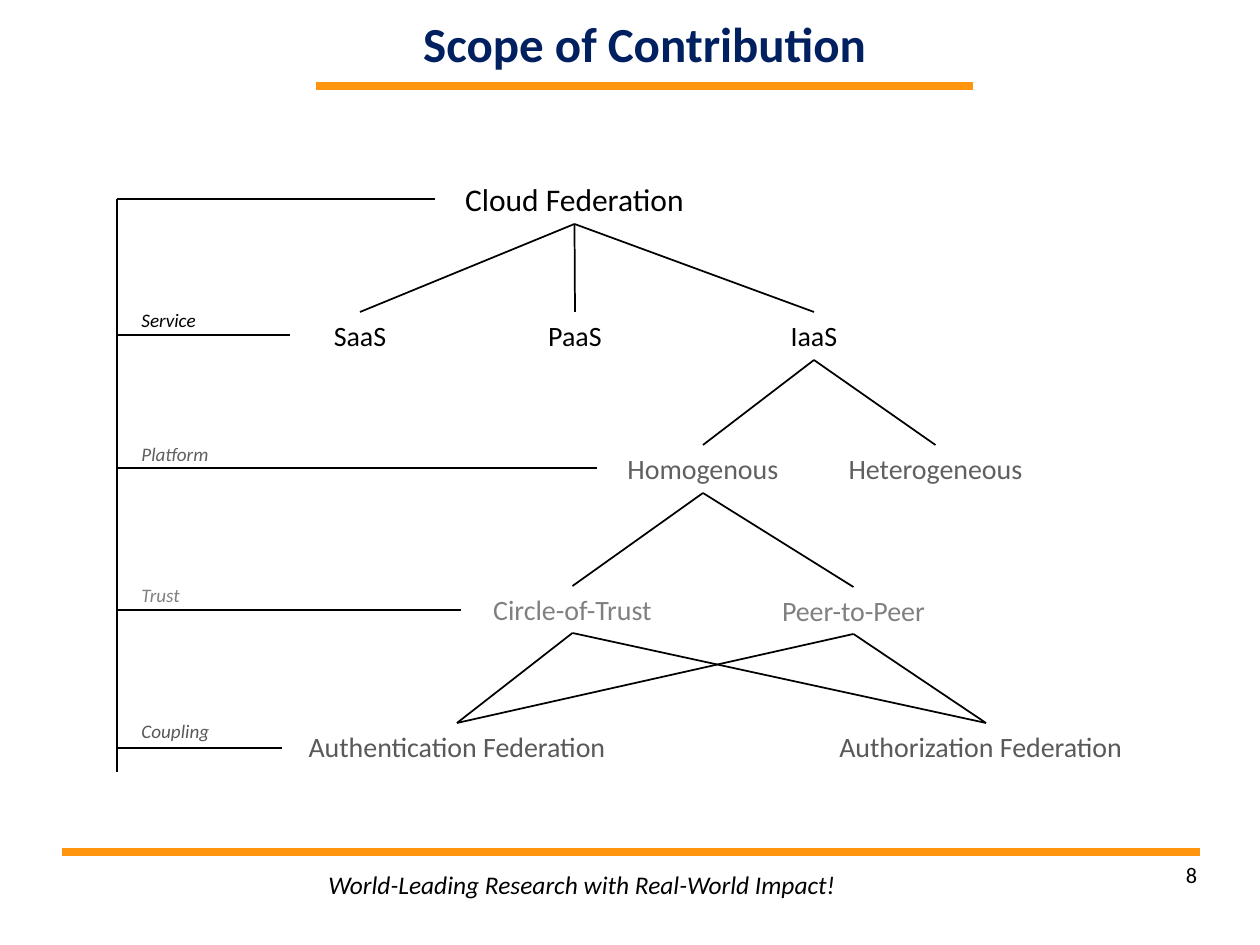
from lxml.etree import SubElement
from pptx import Presentation
from pptx.dml.color import RGBColor
from pptx.enum.shapes import MSO_CONNECTOR
from pptx.enum.text import MSO_ANCHOR, MSO_AUTO_SIZE, PP_ALIGN
from pptx.oxml.ns import qn
from pptx.util import Inches, Pt

PX = Inches(1) / 126
COLORS = {
    "navy": "002060",
    "orange": "FF950E",
    "black": "000000",
    "platform": "606060",
    "trust": "808080",
    "coupling": "595959",
}
LEFT, CENTER, RIGHT = PP_ALIGN.LEFT, PP_ALIGN.CENTER, PP_ALIGN.RIGHT
BOTTOM, TOP = 2, 0

deck = Presentation()
deck.slide_width, deck.slide_height = Inches(10), Inches(7.5)
page = deck.slides.add_slide(deck.slide_layouts[6])


def add_text(text, place, size, color="black", align=CENTER, bold=False,
             italic=False, wrap=True, fit=True):
    """Add a one-line text box; without fit it keeps its size and has no insets."""
    box = page.shapes.add_textbox(*(round(length * PX) for length in place))
    frame = box.text_frame
    frame.word_wrap = wrap
    if fit:
        frame.auto_size = MSO_AUTO_SIZE.SHAPE_TO_FIT_TEXT
    else:
        frame.margin_left = frame.margin_right = 0
        frame.margin_top = frame.margin_bottom = 0
    para = frame.paragraphs[0]
    para.text = text
    para.alignment = align
    para.font.name = "Calibri"
    para.font.size = Pt(size)
    para.font.bold = bold
    para.font.italic = italic
    para.font.color.rgb = RGBColor.from_string(COLORS[color])
    return box


def add_line(start, end, width, color="black"):
    line = page.shapes.add_connector(
        MSO_CONNECTOR.STRAIGHT, *(round(length * PX) for length in (*start, *end)))
    line.line.width = Pt(width)
    line.line.color.rgb = RGBColor.from_string(COLORS[color])
    SubElement(line._element.spPr, qn("a:effectLst"))
    return line


# Title, footer and their rules
add_line((316, 86), (973, 86), 4.31, "orange")
add_line((62, 852), (1200, 852), 4.31, "orange")
number = add_text("8", (903, 861, 294, 64), 12.7, align=RIGHT, fit=False)
number.text_frame.paragraphs[0].line_spacing = 1.01
add_text("World-Leading Research with Real-World Impact!", (316, 863, 538, 44),
         14.5, align=LEFT, italic=True, wrap=False)
title = add_text("Scope of Contribution", (277, 0, 735, 86), 28, "navy",
                 bold=True, fit=False)
title.text_frame.vertical_anchor = MSO_ANCHOR.MIDDLE

# Rail on the left with one branch per level
RAIL_X, RAIL_TOP = 117, 199
add_line((RAIL_X, RAIL_TOP), (RAIL_X, 772), 1.25)
add_line((RAIL_X, RAIL_TOP), (435, RAIL_TOP), 1.25)
levels = [  # label, label top, label width, branch y, branch end, color
    ("Service", 302, 96, 335, 290, "black"),
    ("Platform", 436, 96, 468, 597, "platform"),
    ("Trust", 577, 96, 610, 461, "trust"),
    ("Coupling", 713, 110, 748, 282, "coupling"),
]
for label, top, width, branch_y, branch_end, color in levels:
    add_line((RAIL_X, branch_y), (branch_end, branch_y), 1.25)
    add_text(label, (129, top, width, 35), 10.9, color, LEFT, italic=True)

# Tree of federation types
nodes = [  # text, place, size, color, alignment
    ("Cloud Federation", (450, 174, 249, 50), 18, "black", CENTER),
    ("SaaS", (311, 312, 98, 48), 16, "black", CENTER),
    ("PaaS", (532, 312, 86, 48), 16, "black", CENTER),
    ("IaaS", (771, 312, 86, 48), 16, "black", CENTER),
    ("Homogenous", (609, 445, 188, 48), 16, "platform", CENTER),
    ("Heterogeneous", (833, 445, 205, 48), 16, "platform", CENTER),
    ("Circle-of-Trust", (475, 586, 195, 47), 16, "trust", CENTER),
    ("Peer-to-Peer", (703, 587, 301, 47), 16, "trust", CENTER),
    ("Authentication Federation", (289, 723, 336, 47), 16, "coupling", CENTER),
    ("Authorization Federation", (827, 723, 318, 47), 16, "coupling", LEFT),
]
boxes = {node[0]: add_text(*node) for node in nodes}

couplings = ["Authentication Federation", "Authorization Federation"]
children = {
    "Cloud Federation": ["SaaS", "PaaS", "IaaS"],
    "IaaS": ["Homogenous", "Heterogeneous"],
    "Homogenous": ["Circle-of-Trust", "Peer-to-Peer"],
    "Circle-of-Trust": couplings,
    "Peer-to-Peer": couplings,
}
for parent, names in children.items():
    for name in names:
        link = add_line((0, 0), (0, 0), 1)
        link.begin_connect(boxes[parent], BOTTOM)
        link.end_connect(boxes[name], TOP)

deck.save("out.pptx")
